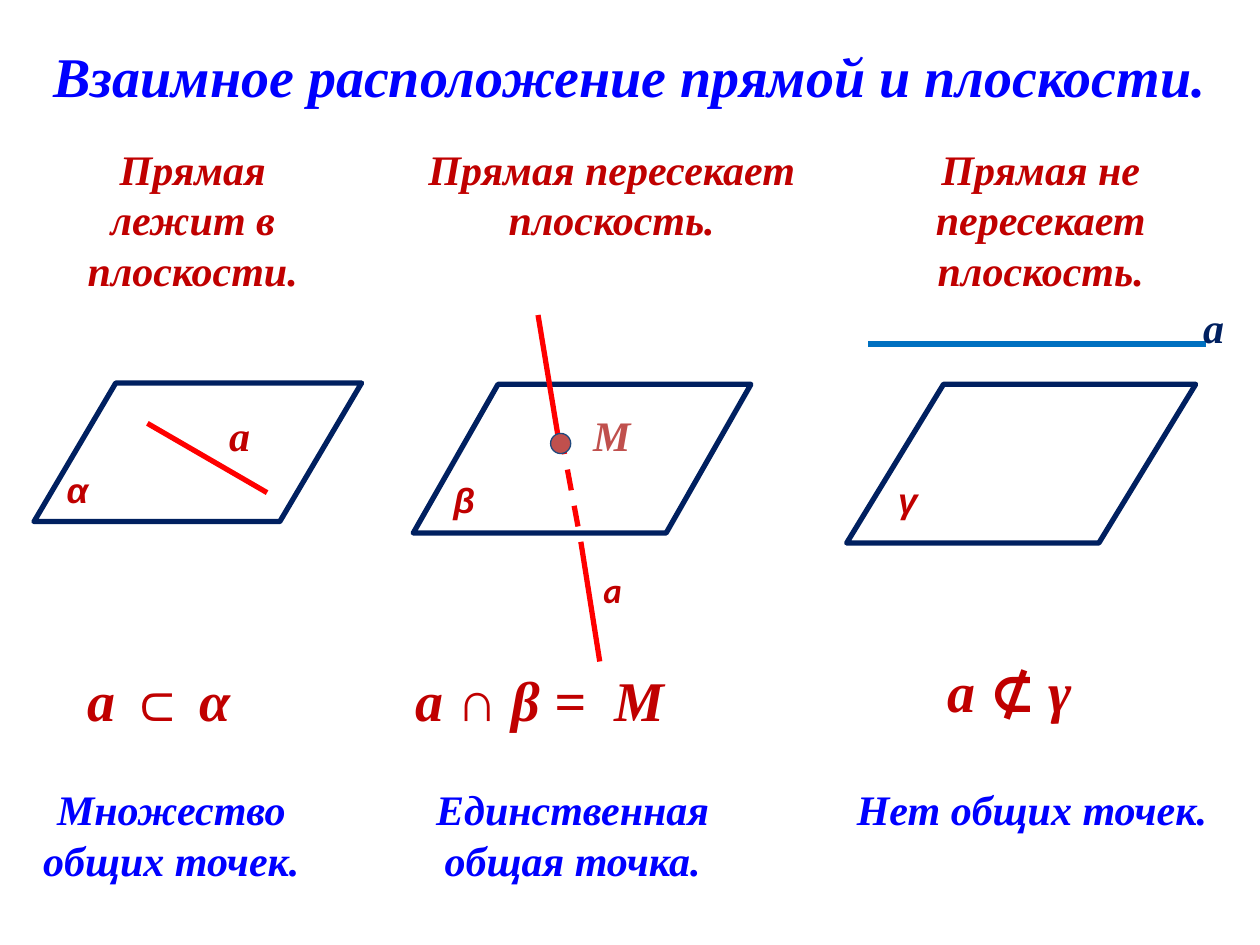
from lxml.etree import SubElement
from pptx import Presentation
from pptx.dml.color import RGBColor
from pptx.enum.dml import MSO_LINE
from pptx.enum.shapes import MSO_CONNECTOR, MSO_SHAPE
from pptx.enum.text import MSO_ANCHOR, MSO_AUTO_SIZE, PP_ALIGN
from pptx.oxml.ns import qn
from pptx.util import Inches, Pt

COLORS = {
    "blue": "0000FF",
    "crimson": "C00000",
    "navy": "002060",
    "red": "FF0000",
    "sky": "0070C0",
    "point": "C0504D",
    "point_edge": "1F497D",
}
SERIF = "Times New Roman"

prs = Presentation()
prs.slide_width, prs.slide_height = Inches(10), Inches(7.5)
slide = prs.slides.add_slide(prs.slide_layouts[5])
shapes = slide.shapes


def write(text, box, size=24, font=SERIF, color="crimson", align=PP_ALIGN.LEFT, holder=None):
    left, top, width, height = [Inches(value) for value in box]
    holder = holder or shapes.add_textbox(left, top, width, height)
    holder.left, holder.top, holder.width, holder.height = left, top, width, height
    frame = holder.text_frame
    frame.word_wrap = True
    frame.auto_size = MSO_AUTO_SIZE.SHAPE_TO_FIT_TEXT
    frame.vertical_anchor = MSO_ANCHOR.TOP
    paragraph = frame.paragraphs[0]
    paragraph.alignment = align
    pieces = [(text, font, True)] if isinstance(text, str) else text
    for words, face, italic in pieces:
        run = paragraph.add_run()
        run.text = words
        run.font.name = face
        run.font.size = Pt(size)
        run.font.bold = True
        run.font.italic = italic
        run.font.color.rgb = RGBColor.from_string(COLORS[color])


def draw_line(start, end, color="red", dash=None):
    ends = [Inches(value) for value in (*start, *end)]
    line = shapes.add_connector(MSO_CONNECTOR.STRAIGHT, *ends)
    line.line.color.rgb = RGBColor.from_string(COLORS[color])
    line.line.width = Pt(3)
    if dash:
        line.line.dash_style = dash
    SubElement(line._element.spPr, qn("a:effectLst"))


write("Взаимное расположение прямой и плоскости.", (0, 0.28, 10, 0.64), size=32,
      color="blue", align=PP_ALIGN.CENTER, holder=shapes.title)

captions = [
    ("Прямая лежит в плоскости.", (0.31, 1.09, 2.44, 1.31), "crimson"),
    ("Прямая пересекает плоскость.", (3.12, 1.09, 3.47, 0.91), "crimson"),
    ("Прямая не пересекает плоскость.", (6.8, 1.09, 2.92, 1.31), "crimson"),
    ("Множество общих точек.", (0, 6.17, 2.72, 0.91), "blue"),
    ("Единственная общая точка.", (3.05, 6.17, 2.99, 0.91), "blue"),
    ("Нет общих точек.", (6.38, 6.17, 3.62, 0.51), "blue"),
]
for caption, box, color in captions:
    write(caption, box, color=color, align=PP_ALIGN.CENTER)

planes = [
    ("α", (0.27, 3.04, 2.6, 1.1), 0.59, (0.43, 3.67, 0.35, 0.44)),
    ("β", (3.28, 3.05, 2.68, 1.18), 0.57, (3.5, 3.75, 0.48, 0.44)),
    ("γ", (6.72, 3.05, 2.77, 1.26), 0.61, (7.03, 3.75, 0.61, 0.44)),
]
for letter, box, slant, letter_box in planes:
    plane = shapes.add_shape(MSO_SHAPE.PARALLELOGRAM, *[Inches(value) for value in box])
    plane.adjustments[0] = slant
    plane.fill.background()
    plane.line.color.rgb = RGBColor.from_string(COLORS["navy"])
    plane.line.width = Pt(3)
    plane.shadow.inherit = False
    write(letter, letter_box, size=20, font="Arial")

draw_line((1.17, 3.36), (2.12, 3.91))

ray_builder = shapes.build_freeform(Inches(4.27), Inches(2.5))
ray_builder.add_line_segments([(Inches(4.45), Inches(3.59))], close=False)
upper_ray = ray_builder.convert_to_shape()
upper_ray.fill.background()
upper_ray.line.color.rgb = RGBColor.from_string(COLORS["red"])
upper_ray.line.width = Pt(3)
upper_ray.shadow.inherit = False
draw_line((4.45, 3.44), (4.61, 4.3), dash=MSO_LINE.DASH)
draw_line((4.61, 4.3), (4.76, 5.25))

point = shapes.add_shape(MSO_SHAPE.OVAL, Inches(4.37), Inches(3.44), Inches(0.16), Inches(0.16))
point.fill.solid()
point.fill.fore_color.rgb = RGBColor.from_string(COLORS["point"])
point.line.color.rgb = RGBColor.from_string(COLORS["point_edge"])
point.line.width = Pt(0.75)
point.shadow.inherit = False

draw_line((6.89, 2.73), (9.57, 2.73), color="sky")

write("а", (1.72, 3.2, 0.55, 0.51))
write("а", (4.69, 4.46, 0.63, 0.44), size=20, font="Calibri")
write("М", (4.61, 3.2, 0.63, 0.51), color="point")
write("а", (9.45, 2.34, 0.55, 0.51), color="navy")

write([("а ", SERIF, True), ("⊂ ", SERIF, False), ("α", SERIF, True)],
      (0, 5.23, 2.52, 0.63), size=32, align=PP_ALIGN.CENTER)
write("а ∩ β =  М", (3.2, 5.23, 2.44, 0.63), size=32)
write([("а ", SERIF, True), ("⊄ ", "Cambria", False), ("γ", SERIF, True)],
      (6.48, 5.16, 3.07, 0.63), size=32, align=PP_ALIGN.CENTER)

prs.save("out.pptx")
